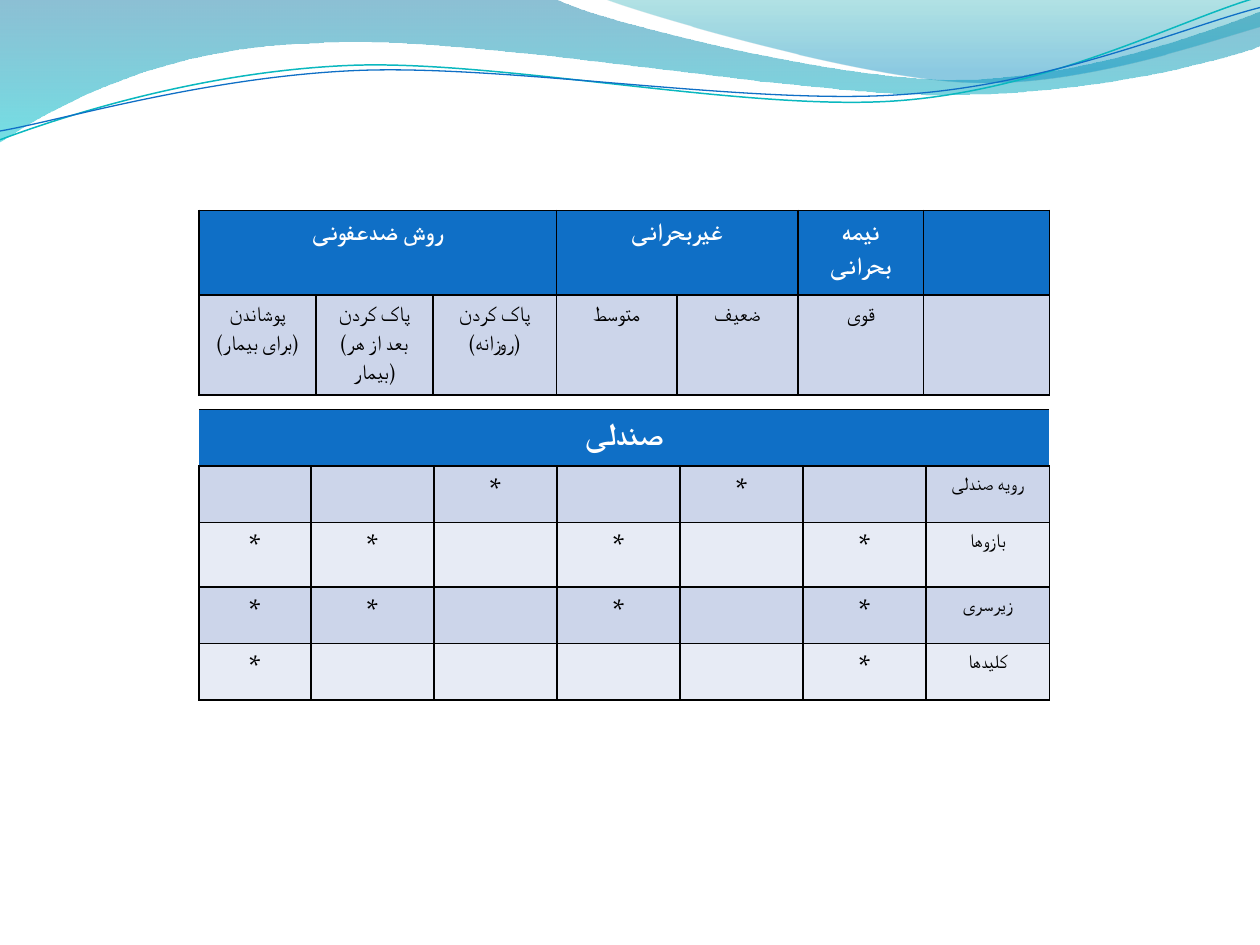
from lxml.etree import SubElement
from pptx import Presentation
from pptx.dml.color import RGBColor
from pptx.enum.text import PP_ALIGN as Align
from pptx.oxml.ns import qn
from pptx.util import Inches, Pt

WHITE = RGBColor(0xFF, 0xFF, 0xFF)
BLACK = RGBColor(0, 0, 0)
BLUE = RGBColor(0x0F, 0x6F, 0xC6)
BAND = RGBColor(0xCC, 0xD5, 0xEA)
PALE = RGBColor(0xE7, 0xEB, 0xF5)
TEAL_LINE = RGBColor(0x0A, 0xB8, 0xBF)
DEEP = RGBColor(0x00, 0x74, 0xA1)
AQUA = RGBColor(0x00, 0xC6, 0xCF)
TEAL = RGBColor(0x00, 0xA1, 0xA9)
SKY = RGBColor(0x00, 0x8B, 0xBF)

FONT = "Vollkorn"
COLS, ROWS = 10, 7.5
UNIT = Inches(1)
TABLE_LEFT, TABLE_WIDTH = 1.58, 6.75

WIDE_WAVE = [
    (0, 0), (4.4, -0.01),
    (4.76, 0.17, 6.64, 0.63, 7.58, 0.63), (8.53, 0.63, 9.58, 0.26, 10, 0.09),
    (10.01, 0.36),
    (9.83, 0.44, 8.7, 0.76, 7.46, 0.75), (6.22, 0.75, 3.82, 0.28, 2.57, 0.34),
    (1.29, 0.36, 0.46, 0.83, -0.01, 1.13),
]
RIGHT_WAVE = [
    (4.79, -0.01),
    (5.09, 0.11, 6.82, 0.62, 7.69, 0.65), (8.56, 0.69, 9.61, 0.32, 10, 0.21),
    (10, 0),
]
TEAL_CURVE = [
    (0, 1.11),
    (0.48, 0.93, 1.58, 0.57, 2.77, 0.52), (3.95, 0.47, 5.93, 0.89, 7.13, 0.8),
    (8.33, 0.71, 9.38, 0.15, 9.98, -0.02),
]
BLUE_CURVE = [
    (0, 1.04),
    (0.47, 0.96, 1.64, 0.61, 2.83, 0.56), (4.03, 0.51, 5.97, 0.84, 7.17, 0.75),
    (8.36, 0.67, 9.41, 0.21, 10, 0.06),
]

METHOD_COLS = [0.93, 0.93, 0.98, 0.96, 0.96, 1, 1]
METHOD_HEADS = ["روش ضدعفونی", "", "", "غیربحرانی", "", "نیمه بحرانی", ""]
METHODS = ["پوشاندن\n(برای بیمار)", "پاک کردن\n(بعد از هر بیمار)",
           "پاک کردن\n(روزانه)", "متوسط", "ضعیف", "قوی", ""]

CHAIR_COLS = [0.89] + [0.98] * 6
CHAIR_ROWS = [0.42, 0.43, 0.51, 0.41, 0.44]
CHAIR_PARTS = [("رویه صندلی", (2, 4)), ("بازوها", (0, 1, 3, 5)),
               ("زیرسری", (0, 1, 3, 5)), ("کلیدها", (0, 5))]


def add_path(slide, path, close):
    """Add a freeform of corners and cubic curves, without shadow."""
    steps = [list(zip(step[::2], step[1::2])) for step in path]
    points = [(x * UNIT, y * UNIT) for step in steps for x, y in step]
    builder = slide.shapes.build_freeform(*points[0], scale=1.0)
    builder.add_line_segments(points[1:], close=close)
    s = builder.convert_to_shape()
    s.shadow.inherit = False
    lines = s.element.spPr.iter(qn("a:lnTo"))
    segments = iter(list(lines))
    for step in steps[1:]:
        group = [next(segments) for _ in step]
        if len(group) == 3:
            curve = group[0].makeelement(qn("a:cubicBezTo"))
            group[0].addprevious(curve)
            for line in group:
                curve.append(line[0])
                line.getparent().remove(line)
    return s


def add_wave(slide, path, stops):
    """Add a wave with a see-through gradient from top to bottom."""
    s = add_path(slide, path, True)
    s.line.fill.background()
    s.fill.gradient()
    s.fill.gradient_angle = 270
    for stop, (position, color, _) in zip(s.fill.gradient_stops, stops):
        stop.position = position
        stop.color.rgb = color
    for node, (_, _, alpha) in zip(s.element.spPr.iter(qn("a:srgbClr")), stops):
        SubElement(node, qn("a:alpha"), val=str(alpha * 1000))


def add_curve(slide, path, color, width):
    """Add an open curved line."""
    s = add_path(slide, path, False)
    s.fill.background()
    s.line.color.rgb = color
    s.line.width = Pt(width)


def add_grid(slide, top, cols, rows):
    """Add a table with the given column shares and row heights."""
    frame = slide.shapes.add_table(
        len(rows), len(cols), int(TABLE_LEFT * UNIT), int(top * UNIT),
        int(TABLE_WIDTH * UNIT), int(sum(rows) * UNIT))
    table = frame.table
    table.first_row = table.horz_banding = False
    for col, share in zip(table.columns, cols):
        col.width = int(share / sum(cols) * TABLE_WIDTH * UNIT)
    for row, height in zip(table.rows, rows):
        row.height = int(height * UNIT)
    return table


def set_cell(cell, text, size, fill, color=BLACK, bold=False, sides="LRTB"):
    """Fill, border and write one centred table cell."""
    tcPr = cell._tc.get_or_add_tcPr()
    for side in "LRTB":
        ln = SubElement(tcPr, qn(f"a:ln{side}"), w=str(Pt(1)))
        if side in sides:
            paint = SubElement(ln, qn("a:solidFill"))
            SubElement(paint, qn("a:srgbClr"), val=str(BLACK))
        else:
            SubElement(ln, qn("a:noFill"))
    cell.fill.solid()
    cell.fill.fore_color.rgb = fill
    cell.text = text
    for p in cell.text_frame.paragraphs:
        p.alignment = Align.CENTER
        p.font.name, p.font.size, p.font.bold = FONT, Pt(size), bold
        p.font.color.rgb = color
        SubElement(p._p.pPr.find(qn("a:defRPr")), qn("a:cs"), typeface=FONT)


def add_method_table(slide):
    """Add the table of disinfection methods."""
    table = add_grid(slide, 1.67, METHOD_COLS, [0.67, 0.49])
    for c, (head, method) in enumerate(zip(METHOD_HEADS, METHODS)):
        set_cell(table.cell(0, c), head, 14, BLUE, WHITE, True)
        set_cell(table.cell(1, c), method, 12, BAND)
    for first, last in ((0, 2), (3, 4)):
        table.cell(0, first).merge(table.cell(0, last))


def add_chair_table(slide):
    """Add the table of chair parts and their marks."""
    table = add_grid(slide, 3.25, CHAIR_COLS, CHAIR_ROWS)
    last = len(CHAIR_COLS) - 1
    for c in range(last + 1):
        set_cell(table.cell(0, c), "" if c else "صندلی", 18, BLUE, WHITE, True, "TB")
    table.cell(0, 0).merge(table.cell(0, last))
    for r, (part, marks) in enumerate(CHAIR_PARTS, 1):
        fill = BAND if r % 2 else PALE
        for c in range(last):
            set_cell(table.cell(r, c), "*" if c in marks else "", 18, fill)
        set_cell(table.cell(r, last), part, 11, fill)


def main():
    """Build the slide and save it."""
    prs = Presentation()
    prs.slide_width, prs.slide_height = int(COLS * UNIT), int(ROWS * UNIT)
    slide = prs.slides.add_slide(prs.slide_layouts[6])
    add_wave(slide, WIDE_WAVE, [(0, DEEP, 45), (1, AQUA, 55)])
    add_wave(slide, RIGHT_WAVE, [(0, TEAL, 30), (0.8, SKY, 45)])
    add_curve(slide, TEAL_CURVE, TEAL_LINE, 0.85)
    add_curve(slide, BLUE_CURVE, BLUE, 0.75)
    add_chair_table(slide)
    add_method_table(slide)
    prs.save("out.pptx")


if __name__ == "__main__":
    main()
